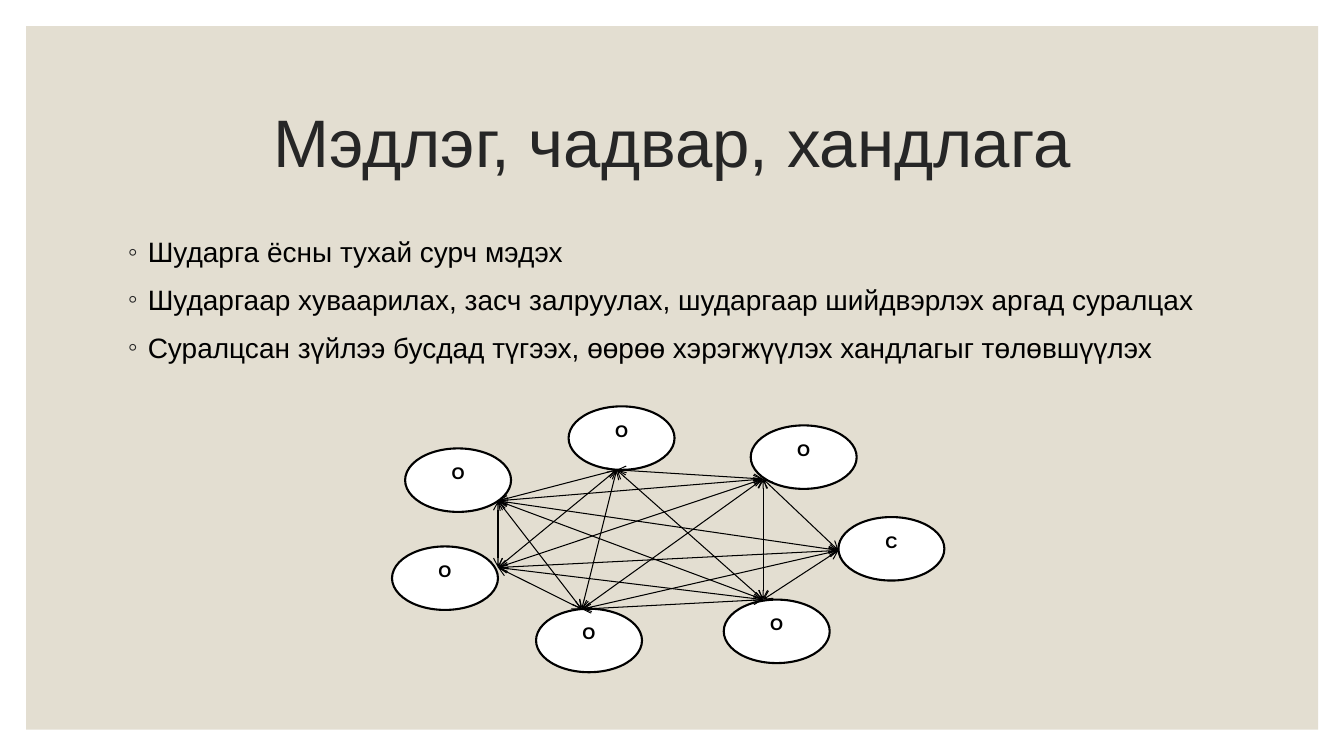
from itertools import combinations

from lxml.etree import SubElement
from pptx import Presentation
from pptx.dml.color import RGBColor
from pptx.enum.shapes import MSO_CONNECTOR, MSO_SHAPE
from pptx.enum.text import MSO_ANCHOR, MSO_AUTO_SIZE, PP_ALIGN
from pptx.oxml.ns import qn
from pptx.util import Cm, Pt

BLACK = RGBColor(0x00, 0x00, 0x00)
WHITE = RGBColor(0xFF, 0xFF, 0xFF)
SAND = RGBColor(0xE3, 0xDE, 0xD1)
CHARCOAL = RGBColor(0x26, 0x26, 0x26)

TITLE = "Мэдлэг, чадвар, хандлага"
SKILLS = [
    "Шударга ёсны тухай сурч мэдэх",
    "Шударгаар хуваарилах, засч залруулах, шударгаар шийдвэрлэх аргад суралцах",
    "Суралцсан зүйлээ бусдад түгээх, өөрөө хэрэгжүүлэх хандлагыг төлөвшүүлэх",
]
OVAL_SIZE = (2.67, 1.6)
OVALS = {
    "top": ("О", 14.33, 10.24),
    "upper left": ("О", 10.21, 11.3),
    "lower left": ("О", 9.88, 13.77),
    "bottom left": ("О", 13.51, 15.34),
    "upper right": ("О", 18.92, 10.72),
    "bottom right": ("О", 18.24, 15.11),
    "right": ("С", 21.13, 13.03),
}
PORTS = {
    "top": (15.54, 11.84),
    "upper left": (12.55, 12.62),
    "lower left": (12.55, 14.3),
    "bottom left": (14.66, 15.35),
    "upper right": (19.23, 12.07),
    "bottom right": (19.23, 15.11),
    "right": (21.13, 13.87),
}
UNLINKED = ("top", "right")


class Deck:
    font = "Arial"

    def __init__(self, prs):
        self.s = prs.slides.add_slide(prs.slide_layouts[1])

    def run(self, p, text, size, color, bold=False):
        r = p.add_run()
        r.text = text
        r.font.name = self.font
        r.font.size = Pt(size)
        r.font.bold = bold
        r.font.color.rgb = color

    def place(self, sp, left, top, width, height):
        sp.left, sp.top = Cm(left), Cm(top)
        sp.width, sp.height = Cm(width), Cm(height)

    def shape(self, kind, left, top, width, height, fill):
        sp = self.s.shapes.add_shape(kind, Cm(left), Cm(top), Cm(width), Cm(height))
        sp.shadow.inherit = False
        sp.fill.solid()
        sp.fill.fore_color.rgb = fill
        return sp

    def panel(self, left, top, width, height):
        sp = self.shape(MSO_SHAPE.RECTANGLE, left, top, width, height, SAND)
        sp.line.fill.background()
        self.s.shapes._spTree.insert(2, sp._element)

    def title(self, text, *box):
        sp = self.s.shapes.title
        self.place(sp, *box)
        tf = sp.text_frame
        tf.auto_size = MSO_AUTO_SIZE.NONE
        tf.vertical_anchor = MSO_ANCHOR.MIDDLE
        p = tf.paragraphs[0]
        p.alignment = PP_ALIGN.CENTER
        p.line_spacing = 0.9
        self.run(p, text, 48, CHARCOAL)

    def bullets(self, items, *box):
        sp = self.s.placeholders[1]
        self.place(sp, *box)
        tf = sp.text_frame
        tf.auto_size = MSO_AUTO_SIZE.NONE
        for i, item in enumerate(items):
            p = tf.add_paragraph() if i else tf.paragraphs[0]
            p.space_before = Pt(9)
            p.space_after = Pt(1)
            pPr = p._p.get_or_add_pPr()
            pPr.set("marL", str(Cm(0.5)))
            pPr.set("indent", str(-Cm(0.5)))
            color = SubElement(pPr, qn("a:buClr"))
            SubElement(color, qn("a:srgbClr"), val=str(CHARCOAL))
            SubElement(pPr, qn("a:buChar"), char="◦")
            self.run(p, item, 20, BLACK)

    def oval(self, text, left, top):
        sp = self.shape(MSO_SHAPE.OVAL, left, top, *OVAL_SIZE, WHITE)
        sp.line.color.rgb = BLACK
        sp.line.width = Pt(1.5)
        tf = sp.text_frame
        tf.word_wrap = True
        tf.vertical_anchor = MSO_ANCHOR.TOP
        p = tf.paragraphs[0]
        p.alignment = PP_ALIGN.CENTER
        self.run(p, text, 12, BLACK, bold=True)

    def arrow(self, start, end):
        points = [Cm(v) for v in (*start, *end)]
        c = self.s.shapes.add_connector(MSO_CONNECTOR.STRAIGHT, *points)
        c.line.color.rgb = BLACK
        c.line.width = Pt(0.75)
        ln = c.line._get_or_add_ln()
        for tag in ("a:headEnd", "a:tailEnd"):
            SubElement(ln, qn(tag), type="arrow")
        SubElement(c._element.spPr, qn("a:effectLst"))


def main():
    prs = Presentation()
    prs.slide_width, prs.slide_height = Cm(33.87), Cm(19.05)
    deck = Deck(prs)
    deck.panel(0.66, 0.66, 32.56, 17.73)
    deck.title(TITLE, 2.97, 1.78, 27.94, 3.81)
    deck.bullets(SKILLS, 2.97, 5.79, 27.94, 10.97)
    for oval in OVALS.values():
        deck.oval(*oval)
    for pair in combinations(PORTS, 2):
        if pair != UNLINKED:
            deck.arrow(*(PORTS[name] for name in pair))
    prs.save("out.pptx")


if __name__ == "__main__":
    main()
